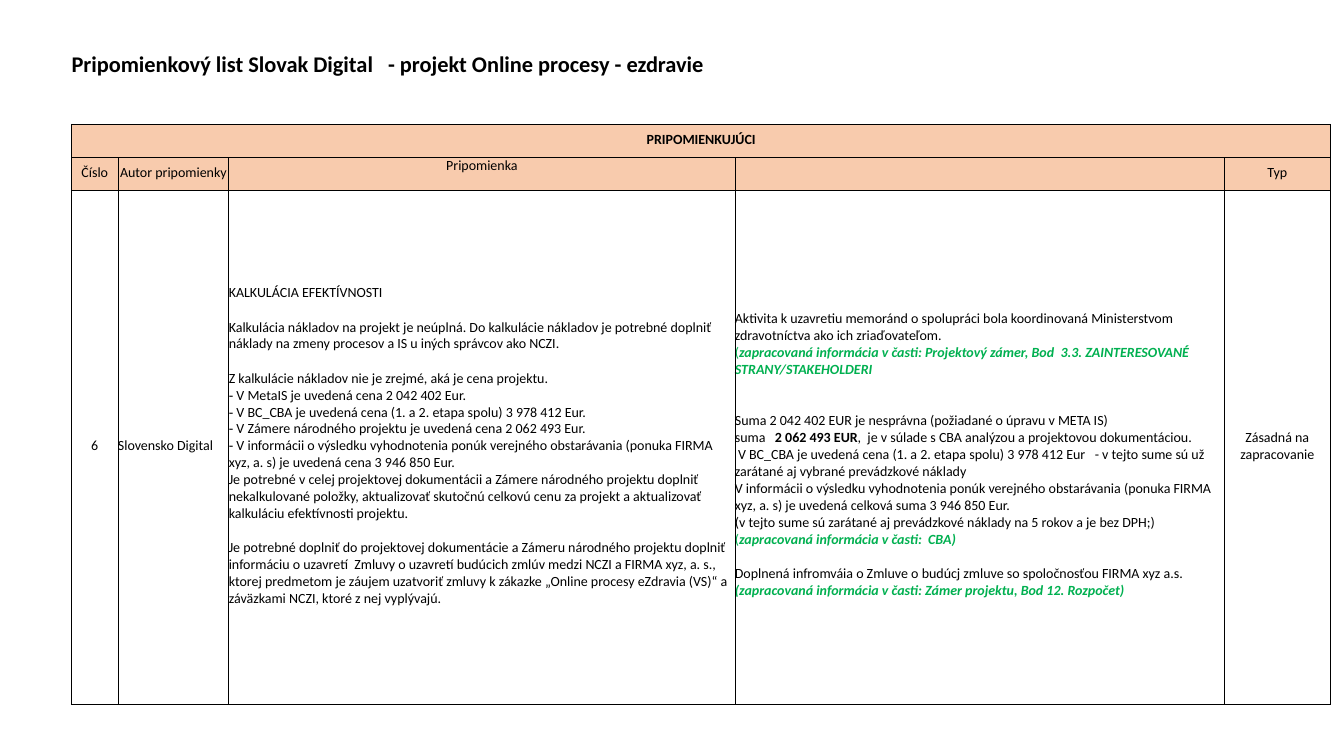
from lxml.etree import SubElement
from pptx import Presentation
from pptx.dml.color import RGBColor
from pptx.enum.text import MSO_ANCHOR as Anchor, PP_ALIGN as Align
from pptx.oxml.ns import qn
from pptx.util import Inches, Pt

COLORS = {"white": "FFFFFF", "black": "000000", "header": "F8CBAD", "note": "00B050"}
STYLES = {
    "plain": ("black", False, False),
    "bold": ("black", True, False),
    "opening": ("note", False, False),
    "note": ("note", True, True),
}
COLUMN_WIDTHS = [0.46, 0.31, 0.79, 0.86, 4.16, 1.91, 1.62, 1.32, 1.06, 0.05]
ROW_HEIGHTS = [0.3, 0.42, 0.33, 0.33, 5.1]
LINE_GAP = 12.2
ALL_SIDES = "LRTB"

COMMENT = [
    (0, "KALKULÁCIA EFEKTÍVNOSTI"),
    (1, "Kalkulácia nákladov na projekt je neúplná. Do kalkulácie nákladov je potrebné doplniť náklady na zmeny procesov a IS u iných správcov ako NCZI."),
    (1, "Z kalkulácie nákladov nie je zrejmé, aká je cena projektu."),
    (0, "⁃ V MetaIS je uvedená cena 2 042 402 Eur."),
    (0, "⁃ V BC_CBA je uvedená cena (1. a 2. etapa spolu) 3 978 412 Eur."),
    (0, "⁃ V Zámere národného projektu je uvedená cena 2 062 493 Eur."),
    (0, "⁃ V informácii o výsledku vyhodnotenia ponúk verejného obstarávania (ponuka FIRMA xyz, a. s) je uvedená cena 3 946 850 Eur."),
    (0, "Je potrebné v celej projektovej dokumentácii a Zámere národného projektu doplniť nekalkulované položky, aktualizovať skutočnú celkovú cenu za projekt a aktualizovať kalkuláciu efektívnosti projektu."),
    (1, "Je potrebné doplniť do projektovej dokumentácie a Zámeru národného projektu doplniť informáciu o uzavretí  Zmluvy o uzavretí budúcich zmlúv medzi NCZI a FIRMA xyz, a. s., ktorej predmetom je záujem uzatvoriť zmluvy k zákazke „Online procesy eZdravia (VS)“ a záväzkami NCZI, ktoré z nej vyplývajú."),
]
ANSWER = [
    (0, "Aktivita k uzavretiu memoránd o spolupráci bola koordinovaná Ministerstvom zdravotníctva ako ich zriaďovateľom."),
    (0, [("(", "opening"), ("zapracovaná informácia v časti: Projektový zámer, Bod  3.3. ZAINTERESOVANÉ STRANY/STAKEHOLDERI", "note")]),
    (2, "Suma 2 042 402 EUR je nesprávna (požiadané o úpravu v META IS)"),
    (0, [("suma   ", "plain"), ("2 062 493 EUR", "bold"), (",  je v súlade s CBA analýzou a projektovou dokumentáciou.", "plain")]),
    (0, " V BC_CBA je uvedená cena (1. a 2. etapa spolu) 3 978 412 Eur   - v tejto sume sú už zarátané aj vybrané prevádzkové náklady"),
    (0, "V informácii o výsledku vyhodnotenia ponúk verejného obstarávania (ponuka FIRMA xyz, a. s) je uvedená celková suma 3 946 850 Eur."),
    (0, "(v tejto sume sú zarátané aj prevádzkové náklady na 5 rokov a je bez DPH;)"),
    (0, [("(", "opening"), ("zapracovaná informácia v časti:  CBA)", "note")]),
    (1, "Doplnená infromváia o Zmluve o budúcj zmluve so spoločnosťou FIRMA xyz a.s."),
    (0, [("(zapracovaná informácia v časti: Zámer projektu, Bod 12. Rozpočet)", "note")]),
]


class CommentSheet:
    font = "Calibri"

    def __init__(self, presentation):
        self.slide = presentation.slides.add_slide(presentation.slide_layouts[6])

    def add_table(self, left, top):
        frame = self.slide.shapes.add_table(
            len(ROW_HEIGHTS), len(COLUMN_WIDTHS), Inches(left), Inches(top),
            Inches(sum(COLUMN_WIDTHS)), Inches(sum(ROW_HEIGHTS)))
        self.table = frame.table
        self.table.first_row = False
        self.table.horz_banding = False
        for column, width in zip(self.table.columns, COLUMN_WIDTHS):
            column.width = Inches(width)
        for row, height in zip(self.table.rows, ROW_HEIGHTS):
            row.height = Inches(height)

    def add_border(self, cell, side, visible):
        properties = cell._tc.get_or_add_tcPr()
        line = SubElement(properties, qn(f"a:ln{side}"), w=str(Pt(0.5)))
        if visible:
            fill = SubElement(line, qn("a:solidFill"))
            SubElement(fill, qn("a:srgbClr"), val=COLORS["black"])
        else:
            SubElement(line, qn("a:noFill"))

    def add_cell(self, row, first, last, content="", fill=None, sides=ALL_SIDES,
                 align=Align.LEFT, anchor=Anchor.MIDDLE, size=10, style="plain", top=0):
        for index in range(first, last + 1):
            cell = self.table.cell(row, index)
            inner = ("L" if index > first else "") + ("R" if index < last else "")
            for side in ALL_SIDES:
                self.add_border(cell, side, side in sides and side not in inner)
            if fill:
                cell.fill.solid()
                cell.fill.fore_color.rgb = RGBColor.from_string(COLORS[fill])
            else:
                cell.fill.background()
            cell.margin_left = cell.margin_right = cell.margin_bottom = 0
            cell.margin_top = Inches(top)
        cell = self.table.cell(row, first)
        if last > first:
            cell.merge(self.table.cell(row, last))
        cell.vertical_anchor = anchor
        if content:
            cell.margin_bottom = Inches(0.03)
            self.add_text(cell.text_frame, content, align, size, style)

    def add_text(self, text_frame, content, align, size, style):
        lines = [(0, content)] if isinstance(content, str) else content
        for index, (gap, parts) in enumerate(lines):
            paragraph = text_frame.add_paragraph() if index else text_frame.paragraphs[0]
            paragraph.alignment = align
            if gap:
                paragraph.space_before = Pt(gap * LINE_GAP)
            for text, name in [(parts, style)] if isinstance(parts, str) else parts:
                run = paragraph.add_run()
                run.text = text
                color, bold, italic = STYLES[name]
                run.font.name, run.font.size = self.font, Pt(size)
                run.font.bold, run.font.italic = bold, italic
                run.font.color.rgb = RGBColor.from_string(COLORS[color])


def main():
    presentation = Presentation()
    presentation.slide_width = Inches(13.33)
    presentation.slide_height = Inches(7.5)
    sheet = CommentSheet(presentation)
    sheet.add_table(0.71, 0.51)

    sheet.add_cell(0, 0, 9, "Pripomienkový list Slovak Digital   - projekt Online procesy - ezdravie",
                   fill="white", sides="", size=16, style="bold")
    for first, last in [(0, 1), (2, 3), (4, 5), (6, 6), (7, 8)]:
        sheet.add_cell(1, first, last, fill="white", sides="B")
    sheet.add_cell(1, 9, 9, fill="white", sides="")
    sheet.add_cell(2, 0, 8, "PRIPOMIENKUJÚCI", fill="header", align=Align.CENTER, style="bold")

    headings = [(0, 0, "Číslo", Anchor.MIDDLE), (1, 2, "Autor pripomienky", Anchor.MIDDLE),
                (3, 4, "Pripomienka", Anchor.TOP), (5, 7, "", Anchor.TOP), (8, 8, "Typ", Anchor.MIDDLE)]
    for first, last, heading, anchor in headings:
        sheet.add_cell(3, first, last, heading, fill="header", align=Align.CENTER, anchor=anchor)

    sheet.add_cell(4, 0, 0, "6", align=Align.CENTER)
    sheet.add_cell(4, 1, 2, "Slovensko Digital")
    sheet.add_cell(4, 3, 4, COMMENT)
    sheet.add_cell(4, 5, 7, ANSWER, top=0.17)
    sheet.add_cell(4, 8, 8, "Zásadná na zapracovanie", align=Align.CENTER)
    for row, fill in [(2, "white"), (3, None), (4, None)]:
        sheet.add_cell(row, 9, 9, fill=fill, sides="L")

    presentation.save("out.pptx")


if __name__ == "__main__":
    main()
